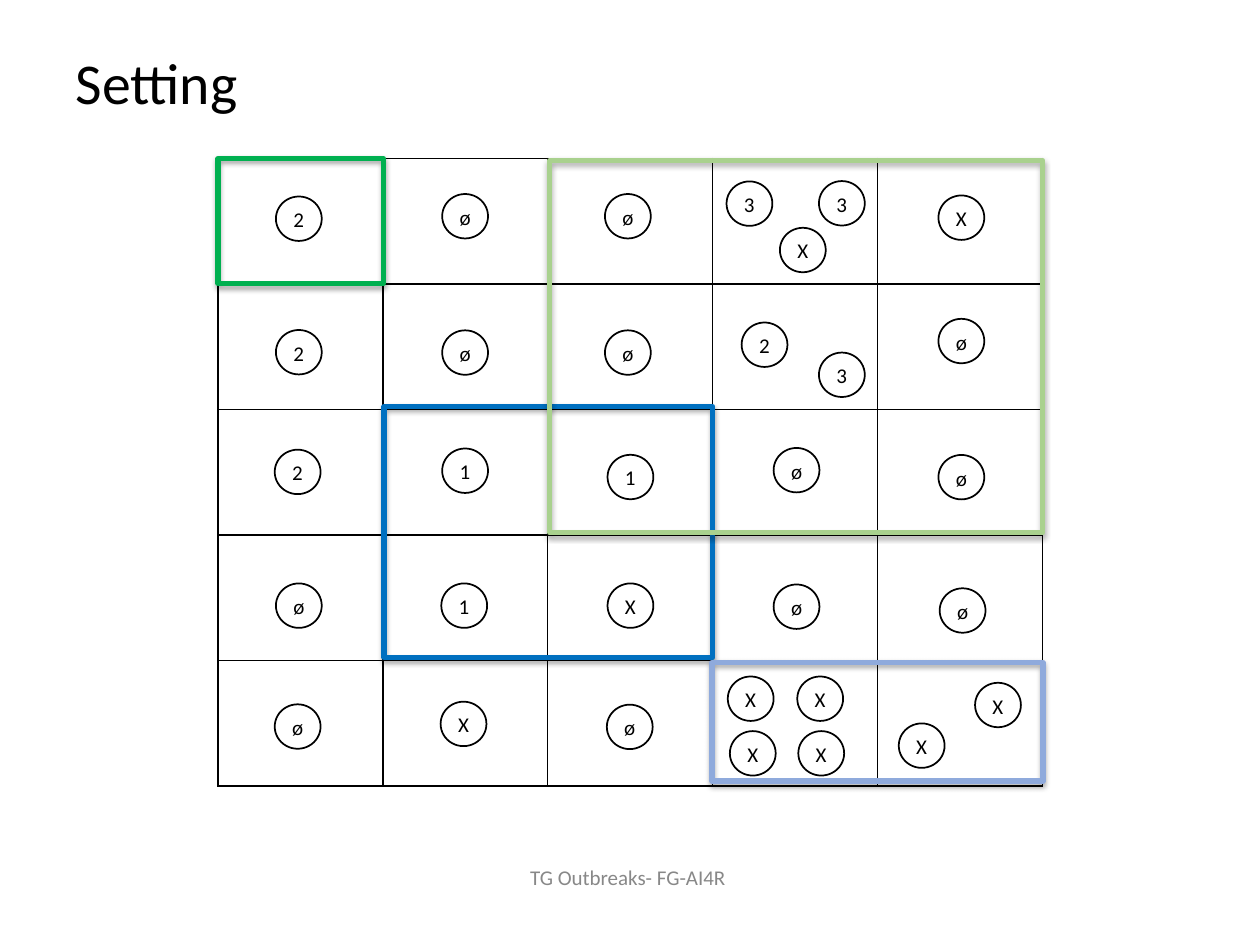
from typing import NamedTuple

from pptx import Presentation
from pptx import util as u
from pptx.dml.color import RGBColor
from pptx.enum import shapes, text
from pptx.oxml import parse_xml
from pptx.oxml.ns import nsdecls

BLACK = RGBColor(0x00, 0x00, 0x00)
WHITE = RGBColor(0xFF, 0xFF, 0xFF)
GREY = RGBColor(0x88, 0x88, 0x88)
GREEN = RGBColor(0x00, 0xB0, 0x50)
BLUE = RGBColor(0x00, 0x70, 0xC0)
PALE_BLUE = RGBColor(0x8F, 0xAA, 0xDC)
PALE_GREEN = RGBColor(0xA9, 0xD1, 0x8E)

FONT = "Calibri"
GRID_SIZE = 5
GRID_LEFT, GRID_TOP = 124.6, 90.7
CELL_WIDTH, CELL_HEIGHT = 94.2, 71.7
TOKEN_WIDTH, TOKEN_HEIGHT = 26.2, 25.4
LABEL_WIDTH, LABEL_HEIGHT = 13.5, 21.6


class Token(NamedTuple):
    label: str
    left: float
    top: float


class Frame(NamedTuple):
    left: float
    top: float
    width: float
    height: float
    color: RGBColor


# Tokens, column by column
TOKENS = [
    Token("2", 157.7, 112.3), Token("2", 157.7, 188.6), Token("2", 157, 257),
    Token("ø", 157.7, 333.4), Token("ø", 157, 402.5),
    Token("ø", 252.7, 110.9), Token("ø", 252.7, 188.8), Token("1", 252.7, 256.3),
    Token("1", 252.2, 333.4), Token("X", 251.8, 401),
    Token("ø", 345.7, 110.9), Token("ø", 345.7, 188.8), Token("1", 347.2, 259.9),
    Token("X", 347.2, 333.4), Token("ø", 346.8, 402.7),
    Token("3", 415.2, 103.7), Token("3", 468, 103.5), Token("X", 445.7, 130.2),
    Token("2", 423.8, 184.3), Token("3", 468, 201.5),
    Token("ø", 442.1, 256), Token("ø", 442.1, 334),
    Token("X", 415.9, 386.6), Token("X", 455.6, 386.6),
    Token("X", 417.1, 417.8), Token("X", 456.2, 417.8),
    Token("X", 536.3, 111.7), Token("ø", 536.3, 182.2), Token("ø", 536.3, 260),
    Token("ø", 537, 336.2), Token("X", 557.2, 390.2), Token("X", 513.6, 413.4),
]

FRAMES = [
    Frame(124.6, 90.7, 94.5, 71.3, GREEN),
    Frame(219.4, 232.4, 188, 143.3, BLUE),
    Frame(406.8, 378.7, 189.2, 67.7, PALE_BLUE),
    Frame(314.1, 91.8, 281.8, 212.6, PALE_GREEN),
]


def points(*values: float) -> list:
    return [u.Pt(value) for value in values]


def write(box, content: str, *, size: float, color: RGBColor = BLACK,
          align=text.PP_ALIGN.LEFT, anchor=text.MSO_ANCHOR.TOP,
          wrap: bool = False, inset_x: float = 3.6, spacing: float = 1.0) -> None:
    frame = box.text_frame
    frame.word_wrap = wrap
    frame.vertical_anchor = anchor
    frame.margin_left = frame.margin_right = u.Pt(inset_x)
    frame.margin_top = frame.margin_bottom = u.Pt(3.6)
    para = frame.paragraphs[0]
    para.alignment = align
    para.line_spacing = spacing
    span = para.add_run()
    span.text = content
    span.font.name = FONT
    span.font.size = u.Pt(size)
    span.font.color.rgb = color


def add_grid(page) -> None:
    table = page.shapes.add_table(
        GRID_SIZE, GRID_SIZE,
        *points(GRID_LEFT, GRID_TOP, CELL_WIDTH * GRID_SIZE, CELL_HEIGHT * GRID_SIZE),
    ).table
    table.first_row = table.horz_banding = False
    for column in table.columns:
        column.width = u.Pt(CELL_WIDTH)
    for row in table.rows:
        row.height = u.Pt(CELL_HEIGHT)
    for cell in table.iter_cells():
        properties = cell._tc.get_or_add_tcPr()
        for side in ("lnL", "lnR", "lnT", "lnB"):
            properties.append(parse_xml(
                f'<a:{side} {nsdecls("a")} w="{u.Pt(1)}"><a:solidFill>'
                f'<a:srgbClr val="{BLACK}"/></a:solidFill></a:{side}>'))
        cell.fill.background()


def add_token(page, token: Token) -> None:
    group = page.shapes.add_group_shape()
    circle = group.shapes.add_shape(
        shapes.MSO_SHAPE.OVAL,
        *points(token.left, token.top, TOKEN_WIDTH, TOKEN_HEIGHT))
    circle.shadow.inherit = False
    circle.fill.solid()
    circle.fill.fore_color.rgb = WHITE
    circle.line.color.rgb = BLACK
    circle.line.width = u.Pt(1)
    label = group.shapes.add_textbox(*points(
        token.left + (TOKEN_WIDTH - LABEL_WIDTH) / 2, token.top + 2.3,
        LABEL_WIDTH, LABEL_HEIGHT))
    write(label, token.label, size=12)


def add_frame(page, frame: Frame) -> None:
    box = page.shapes.add_shape(
        shapes.MSO_SHAPE.RECTANGLE,
        *points(frame.left, frame.top, frame.width, frame.height))
    box.fill.background()
    box.line.color.rgb = frame.color
    box.line.width = u.Pt(3)
    box.shadow.inherit = False
    # Soft shadow straight below the outline
    box._element.spPr.find("{*}effectLst").append(parse_xml(
        f'<a:outerShdw {nsdecls("a")} blurRad="{u.Pt(3)}" dist="{u.Pt(1.8)}" '
        f'dir="5400000" rotWithShape="0"><a:srgbClr val="{BLACK}">'
        f'<a:alpha val="35000"/></a:srgbClr></a:outerShdw>'))


def main() -> None:
    deck = Presentation()
    deck.slide_width, deck.slide_height = points(720, 540)
    page = deck.slides.add_slide(deck.slide_layouts[5])

    # Title
    title = page.shapes.title
    title.left, title.top, title.width, title.height = points(36, 21.6, 107.3, 55.4)
    write(title, "Setting", size=33, anchor=text.MSO_ANCHOR.MIDDLE,
          inset_x=7.2, spacing=0.9)

    # Grid with its tokens and highlighted regions
    add_grid(page)
    for token in TOKENS:
        add_token(page, token)
    for frame in FRAMES:
        add_frame(page, frame)

    # Footer
    footer = page.shapes.add_textbox(*points(248.4, 490.3, 221, 21.6))
    write(footer, "TG Outbreaks- FG-AI4R", size=12, color=GREY, wrap=True,
          align=text.PP_ALIGN.CENTER, anchor=text.MSO_ANCHOR.MIDDLE)

    deck.save("out.pptx")


if __name__ == "__main__":
    main()
